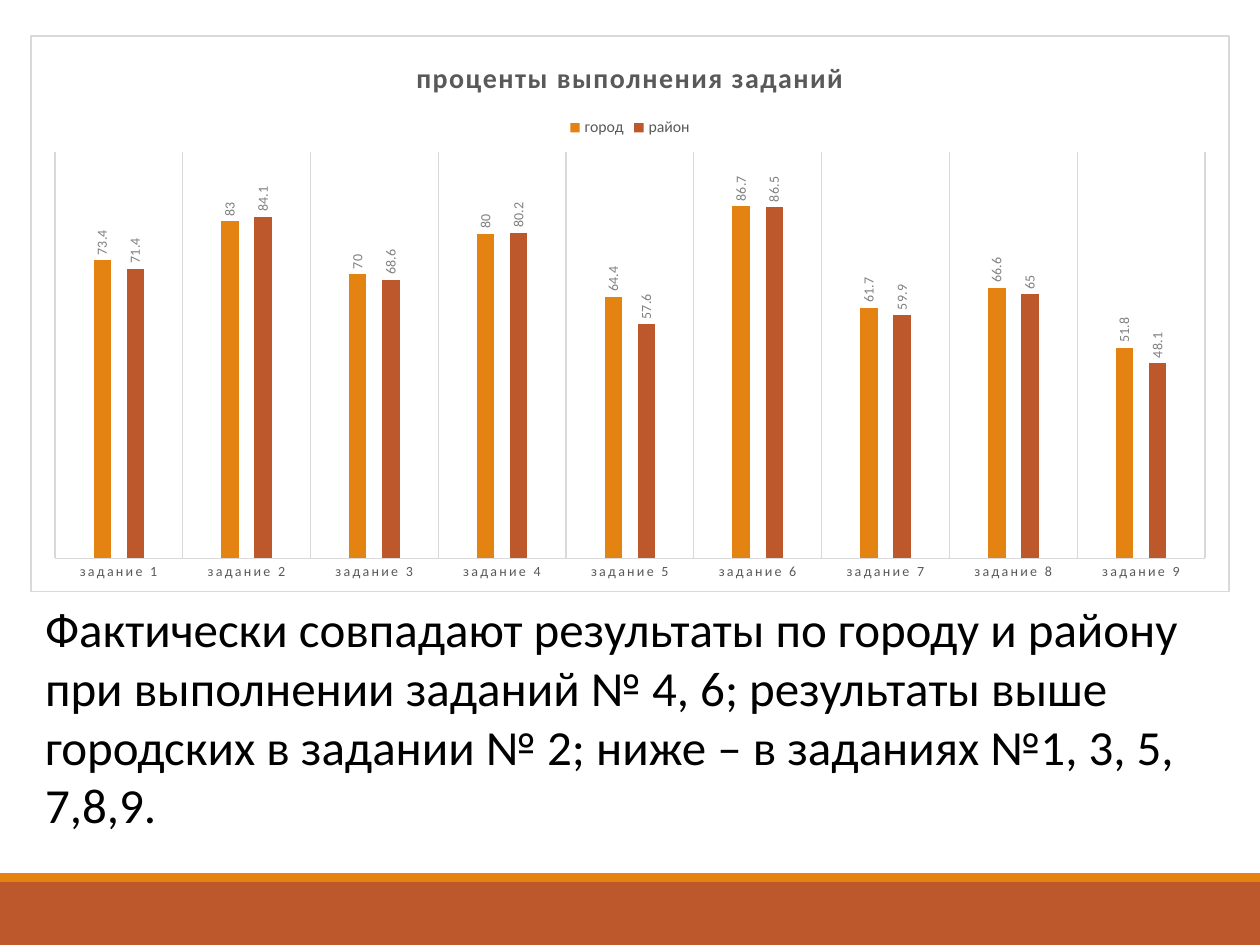
import dataclasses

import lxml.etree
import pptx
import pptx.chart.data
import pptx.dml.color
import pptx.enum.chart
import pptx.enum.shapes
import pptx.oxml
import pptx.oxml.ns
import pptx.util

Cm = pptx.util.Cm
qn = pptx.oxml.ns.qn


@dataclasses.dataclass(frozen=True)
class Theme:
    font: str = "Calibri"
    orange: str = "E48312"
    rust: str = "BD582C"
    white: str = "FFFFFF"
    black: str = "000000"
    gray: str = "595959"
    label: str = "808080"
    rule: str = "D9D9D9"
    body_size: float = 28
    title_size: float = 16
    legend_size: float = 9
    small_size: float = 8
    rule_width: float = 0.75


@dataclasses.dataclass(frozen=True)
class Band:
    top: float
    height: float
    color: str


@dataclasses.dataclass(frozen=True)
class Series:
    name: str
    values: tuple
    color: str


THEME = Theme()
BANDS = (Band(17.78, 1.27, THEME.rust), Band(17.6, 0.18, THEME.orange))
SERIES = (
    Series("город", (73.4, 83, 70, 80, 64.4, 86.7, 61.7, 66.6, 51.8), THEME.orange),
    Series("район", (71.4, 84.1, 68.6, 80.2, 57.6, 86.5, 59.9, 65, 48.1), THEME.rust),
)
TITLE = "проценты выполнения заданий"
BODY = (
    "Фактически совпадают результаты по городу и району при выполнении "
    "заданий № 4, 6; результаты выше городских в задании № 2; "
    "ниже – в заданиях №1, 3, 5, 7,8,9."
)


def rgb(color: str):
    return pptx.dml.color.RGBColor.from_string(color)


def style_font(font, size: float, color: str, bold: bool = False) -> None:
    font.name = THEME.font
    font.size = pptx.util.Pt(size)
    font.bold = bold
    font.color.rgb = rgb(color)


def style_line(line) -> None:
    line.color.rgb = rgb(THEME.rule)
    line.width = pptx.util.Pt(THEME.rule_width)


def add_band(page, band: Band, width: int) -> None:
    shape = page.shapes.add_shape(
        pptx.enum.shapes.MSO_SHAPE.RECTANGLE, 0, Cm(band.top), width, Cm(band.height)
    )
    shape.shadow.inherit = False
    shape.fill.solid()
    shape.fill.fore_color.rgb = rgb(band.color)
    shape.line.fill.background()


def frame_chart(chart) -> None:
    """Give the chart area a white fill and a thin border."""
    namespace = "http://schemas.openxmlformats.org/drawingml/2006/main"
    area = pptx.oxml.parse_xml(
        '<c:spPr xmlns:c="http://schemas.openxmlformats.org/drawingml/2006/chart" '
        f'xmlns:a="{namespace}"><a:solidFill><a:srgbClr val="{THEME.white}"/></a:solidFill>'
        f'<a:ln w="{pptx.util.Pt(THEME.rule_width)}"><a:solidFill>'
        f'<a:srgbClr val="{THEME.rule}"/></a:solidFill></a:ln></c:spPr>'
    )
    chart._chartSpace.find(qn("c:chart")).addnext(area)


def place_plot(chart, **fractions: float) -> None:
    """Fix the inner plot area as fractions of the chart."""
    plot_area = chart._chartSpace.find(qn("c:chart")).find(qn("c:plotArea"))
    layout = plot_area.find(qn("c:layout"))
    if layout is None:
        layout = lxml.etree.Element(qn("c:layout"))
        plot_area.insert(0, layout)
    manual = lxml.etree.SubElement(layout, qn("c:manualLayout"))
    settings = {"layoutTarget": "inner", "xMode": "edge", "yMode": "edge", **fractions}
    for name, value in settings.items():
        lxml.etree.SubElement(manual, qn(f"c:{name}")).set("val", str(value))


def add_results_chart(page) -> None:
    data = pptx.chart.data.CategoryChartData()
    data.categories = [f"задание {number}" for number in range(1, 10)]
    for series in SERIES:
        data.add_series(series.name, series.values)
    chart = page.shapes.add_chart(
        pptx.enum.chart.XL_CHART_TYPE.COLUMN_CLUSTERED,
        Cm(0.61), Cm(0.71), Cm(24.18), Cm(11.23), data,
    ).chart
    style_font(chart.font, 10, THEME.black)
    frame_chart(chart)
    place_plot(chart, x=0.02, y=0.21, w=0.96, h=0.73)

    # Title and legend
    chart.has_title = True
    span = chart.chart_title.text_frame.paragraphs[0].add_run()
    span.text = TITLE
    style_font(span.font, THEME.title_size, THEME.gray, bold=True)
    span.font._element.set("spc", "100")
    chart.chart_title.include_in_layout = False
    chart.has_legend = True
    chart.legend.position = pptx.enum.chart.XL_LEGEND_POSITION.TOP
    chart.legend.include_in_layout = False
    style_font(chart.legend.font, THEME.legend_size, THEME.gray)

    # Axes
    tasks = chart.category_axis
    tasks.major_tick_mark = pptx.enum.chart.XL_TICK_MARK.NONE
    tasks.has_major_gridlines = True
    style_line(tasks.major_gridlines.format.line)
    style_line(tasks.format.line)
    style_font(tasks.tick_labels.font, THEME.small_size, THEME.gray)
    tasks.tick_labels.font._element.set("spc", "120")
    percents = chart.value_axis
    percents.minimum_scale, percents.maximum_scale = 0, 100
    percents.has_major_gridlines = False
    percents.visible = False

    # Columns and their upright labels
    plot = chart.plots[0]
    plot.gap_width, plot.overlap = 444, -90
    plot.vary_by_categories = False
    for column, series in zip(plot.series, SERIES):
        column.format.fill.solid()
        column.format.fill.fore_color.rgb = rgb(series.color)
        labels = column.data_labels
        labels.show_value = True
        labels.position = pptx.enum.chart.XL_LABEL_POSITION.OUTSIDE_END
        style_font(labels.font, THEME.small_size, THEME.label)
        body = labels._element.find(qn("c:txPr")).find(qn("a:bodyPr"))
        body.set("rot", "-5400000")
        body.set("vert", "horz")


def add_conclusion(page) -> None:
    box = page.shapes.add_textbox(Cm(0.66), Cm(11.94), Cm(24.13), Cm(5.05))
    box.text_frame.word_wrap = True
    para = box.text_frame.paragraphs[0]
    span = para.add_run()
    span.text = BODY
    style_font(span.font, THEME.body_size, THEME.black)


def main() -> None:
    deck = pptx.Presentation()
    deck.slide_width, deck.slide_height = Cm(25.4), Cm(19.05)
    page = deck.slides.add_slide(deck.slide_layouts[6])
    for band in BANDS:
        add_band(page, band, deck.slide_width)
    add_results_chart(page)
    add_conclusion(page)
    deck.save("out.pptx")


if __name__ == "__main__":
    main()
